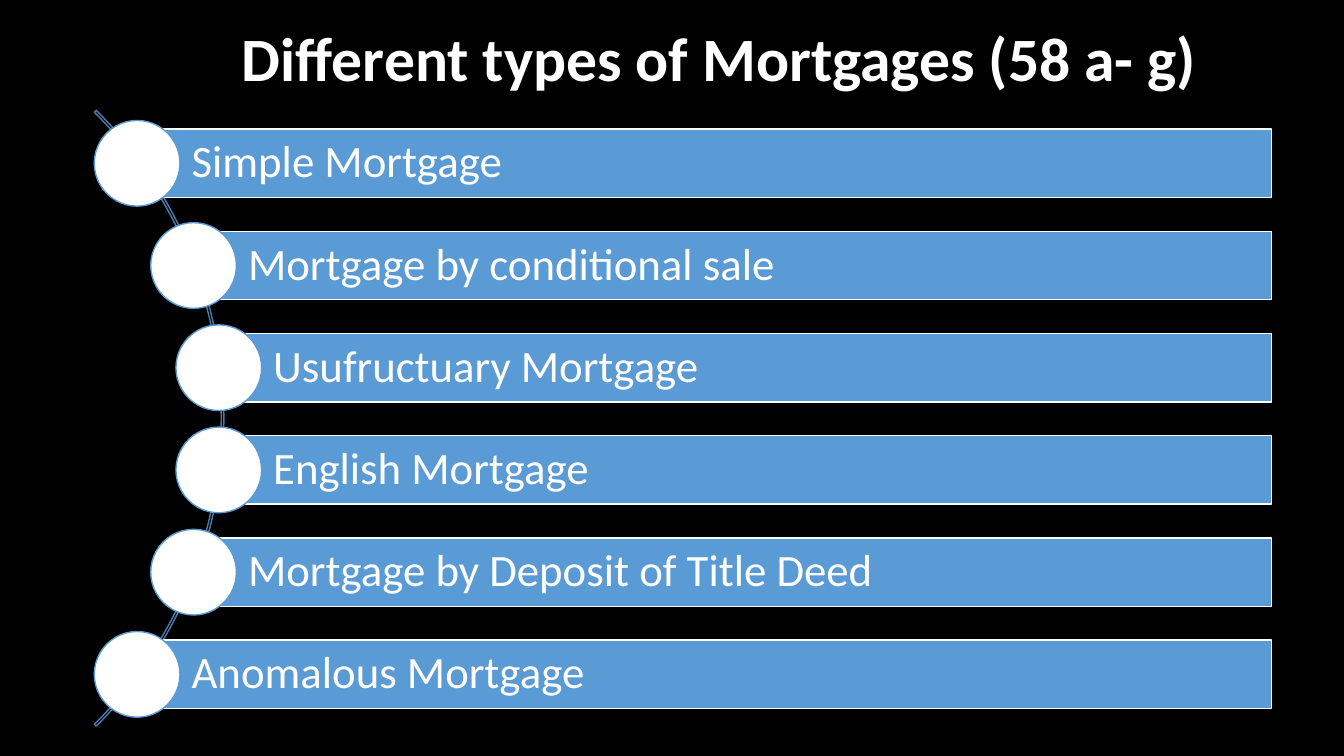
import dataclasses

import pptx
import pptx.dml.color
import pptx.enum.shapes
import pptx.enum.text
import pptx.util

RGBColor = pptx.dml.color.RGBColor
BLACK = RGBColor(0x00, 0x00, 0x00)
WHITE = RGBColor(0xFF, 0xFF, 0xFF)
BLUE = RGBColor(0x5B, 0x9B, 0xD5)
DARK_BLUE = RGBColor(0x49, 0x7C, 0xAB)

SHAPES = pptx.enum.shapes.MSO_SHAPE
ANCHOR = pptx.enum.text.MSO_ANCHOR
CELL = pptx.util.Inches(0.1)
FIRST_CENTRE = 16.2
ROW_STEP = 10.14
BAR_RIGHT = 126.1
BAR_HEIGHT = 6.8
CIRCLE_SIZE = 8.5
ARC_SIZE = 86.4


@dataclasses.dataclass(frozen=True)
class Box:
    column: float
    row: float
    columns: float
    rows: float

    def lengths(self) -> tuple[int, ...]:
        return tuple(round(cells * CELL) for cells in dataclasses.astuple(self))


@dataclasses.dataclass(frozen=True)
class MortgageType:
    name: str
    column: float


MORTGAGE_TYPES = [
    MortgageType("Simple Mortgage", 13.6),
    MortgageType("Mortgage by conditional sale", 19.2),
    MortgageType("Usufructuary Mortgage", 21.7),
    MortgageType("English Mortgage", 21.7),
    MortgageType("Mortgage by Deposit of Title Deed", 19.2),
    MortgageType("Anomalous Mortgage", 13.6),
]


def write_text(shape, text: str, *, size: float, bold: bool, left_inset: float,
               inset: float, anchor) -> None:
    frame = shape.text_frame
    frame.word_wrap = True
    frame.auto_size = pptx.enum.text.MSO_AUTO_SIZE.NONE
    frame.vertical_anchor = anchor
    frame.margin_left = pptx.util.Inches(left_inset)
    frame.margin_right = pptx.util.Inches(0.09)
    frame.margin_top = frame.margin_bottom = pptx.util.Inches(inset)
    paragraph = frame.paragraphs[0]
    paragraph.text = text
    paragraph.alignment = pptx.enum.text.PP_ALIGN.LEFT
    paragraph.line_spacing = 0.9
    paragraph.space_before = pptx.util.Pt(0)
    paragraph.font.name = "Calibri"
    paragraph.font.size = pptx.util.Pt(size)
    paragraph.font.bold = bold
    paragraph.font.color.rgb = WHITE


def add_shape(slide, kind, box: Box, *, line: RGBColor, fill: RGBColor | None = None):
    shape = slide.shapes.add_shape(kind, *box.lengths())
    shape.shadow.inherit = False
    if fill is None:
        shape.fill.background()
    else:
        shape.fill.solid()
        shape.fill.fore_color.rgb = fill
    shape.line.color.rgb = line
    shape.line.width = pptx.util.Pt(1)
    return shape


def add_title(slide) -> None:
    title = slide.shapes.title
    title.left, title.top, title.width, title.height = Box(4.2, 2.3, 122.8, 8).lengths()
    write_text(title, "Different types of Mortgages (58 a- g)", size=44, bold=True,
               left_inset=1.98, inset=0.05, anchor=ANCHOR.TOP)


def add_arc(slide) -> None:
    arc = add_shape(slide, SHAPES.BLOCK_ARC, Box(-64.2, -1.7, ARC_SIZE, ARC_SIZE),
                    line=DARK_BLUE)
    for index, value in enumerate((189, 27, 0.003)):
        arc.adjustments[index] = value


def add_mortgage_type(slide, mortgage: MortgageType, centre: float) -> None:
    bar = add_shape(
        slide, SHAPES.RECTANGLE,
        Box(mortgage.column, centre - BAR_HEIGHT / 2, BAR_RIGHT - mortgage.column, BAR_HEIGHT),
        line=WHITE, fill=BLUE)
    write_text(bar, mortgage.name, size=32, bold=False, left_inset=0.54, inset=0.09,
               anchor=ANCHOR.MIDDLE)
    radius = CIRCLE_SIZE / 2
    add_shape(slide, SHAPES.OVAL,
              Box(mortgage.column - radius, centre - radius, CIRCLE_SIZE, CIRCLE_SIZE),
              line=BLUE, fill=WHITE)


def main() -> None:
    presentation = pptx.Presentation()
    presentation.slide_width = pptx.util.Inches(13.33)
    presentation.slide_height = pptx.util.Inches(7.5)
    slide = presentation.slides.add_slide(presentation.slide_layouts.get_by_name("Title Only"))
    slide.background.fill.solid()
    slide.background.fill.fore_color.rgb = BLACK
    add_title(slide)
    add_arc(slide)
    for index, mortgage in enumerate(MORTGAGE_TYPES):
        add_mortgage_type(slide, mortgage, FIRST_CENTRE + index * ROW_STEP)
    presentation.save("out.pptx")


if __name__ == "__main__":
    main()
